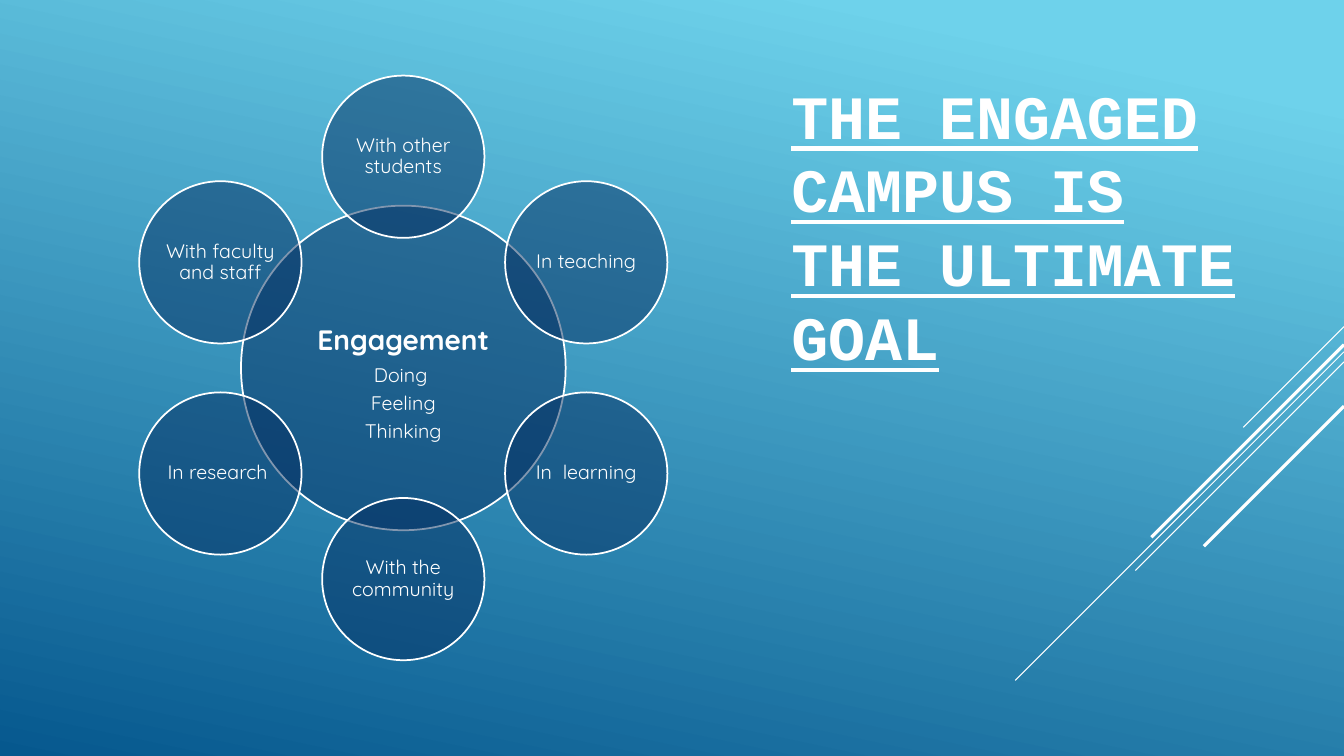
import math
from dataclasses import dataclass

import lxml.etree
import pptx
import pptx.dml.color
import pptx.enum.shapes
import pptx.enum.text
import pptx.oxml.ns
import pptx.util

Inches = pptx.util.Inches
Pt = pptx.util.Pt
qn = pptx.oxml.ns.qn


@dataclass(frozen=True)
class Theme:
    """Colours, fonts and type sizes of the slide."""
    white: str = "FFFFFF"
    navy: str = "052F61"
    sky: str = "6ED2EB"
    deep: str = "06588E"
    title_font: str = "Courier New"
    body_font: str = "Quicksand"
    title: int = 44
    heading: int = 20
    body: int = 14
    outline: float = 1.25
    thin: float = 0.75
    thick: float = 2.25


THEME = Theme()
PETALS = ["With other students", "In teaching", "In  learning",
          "With the community", "In research ", "With faculty and staff"]
FEATURES = ["Doing ", "Feeling", "Thinking"]
STREAKS = [(3.24, 1.0, THEME.thin), (3.49, 3.26, THEME.thin),
           (3.59, 2.07, THEME.thin), (3.42, 1.91, THEME.thick),
           (4.03, 1.39, THEME.thick)]


def rgb(color):
    """Turn a hex string into a colour."""
    return pptx.dml.color.RGBColor.from_string(color)


def write(p, text, *, size=THEME.body, font=THEME.body_font, bold=False,
          underline=False, align=None, spacing=None, after=None):
    """Write formatted text into a paragraph."""
    p.alignment, p.line_spacing = align, spacing
    if after is not None:
        p.space_after = Pt(after)
    r = p.add_run()
    r.text = text
    r.font.name, r.font.size = font, Pt(size)
    r.font.bold, r.font.underline = bold, underline
    r.font.color.rgb = rgb(THEME.white)


def add_background(s):
    """Fill the slide with a slanted blue gradient."""
    fill = s.background.fill
    fill.gradient()
    fill.gradient_angle = 360 - 102
    stops = [(0.1, THEME.sky), (1.0, THEME.deep)]
    for stop, (position, color) in zip(fill.gradient_stops, stops):
        stop.position = position
        stop.color.rgb = rgb(color)


def add_streaks(s, right):
    """Draw the diagonal lines that run down from the right edge."""
    for top, reach, width in STREAKS:
        line = s.shapes.add_connector(
            pptx.enum.shapes.MSO_CONNECTOR.STRAIGHT, Inches(right), Inches(top),
            Inches(right - reach), Inches(top + reach))
        line.line.color.rgb = rgb(THEME.white)
        line.line.width = Pt(width)
        lxml.etree.SubElement(line.element.spPr, qn("a:effectLst"))


def add_title(s, left, top, width, height):
    """Place the underlined title against the bottom of its box."""
    box = s.shapes.add_textbox(*map(Inches, (left, top, width, height)))
    tf = box.text_frame
    tf.word_wrap = True
    tf.vertical_anchor = pptx.enum.text.MSO_ANCHOR.BOTTOM
    write(tf.paragraphs[0], "THE ENGAGED CAMPUS IS THE ULTIMATE GOAL",
          size=THEME.title, font=THEME.title_font, bold=True, underline=True)


def add_circle(s, cx, cy, diameter, lines, inset, drop=0):
    """Draw a translucent circle with centred lines of (text, size, bold)."""
    sp = s.shapes.add_shape(
        pptx.enum.shapes.MSO_SHAPE.OVAL, Inches(cx - diameter / 2),
        Inches(cy - diameter / 2), Inches(diameter), Inches(diameter))
    sp.shadow.inherit = False
    sp.fill.solid()
    sp.fill.fore_color.rgb = rgb(THEME.navy)
    tint = sp.element.spPr.find(qn("a:solidFill"))[0]
    lxml.etree.SubElement(tint, qn("a:alpha"), val="50000")
    sp.line.color.rgb = rgb(THEME.white)
    sp.line.width = Pt(THEME.outline)
    tf = sp.text_frame
    tf.word_wrap = True
    tf.vertical_anchor = pptx.enum.text.MSO_ANCHOR.MIDDLE
    tf.margin_left = tf.margin_right = tf.margin_bottom = Inches(inset)
    tf.margin_top = Inches(inset + drop)
    for i, (text, size, bold) in enumerate(lines):
        p = tf.add_paragraph() if i else tf.paragraphs[0]
        write(p, text, size=size, bold=bold, spacing=0.9, after=0.35 * size,
              align=pptx.enum.text.PP_ALIGN.CENTER)


def add_wheel(s, left, top, width, height):
    """Draw the engagement circle with its ring of petals."""
    cx, cy = left + width / 2, top + height / 2
    petal = 1.61
    radius = (height - petal) / 2
    core = [("Engagement", THEME.heading, True)]
    core += [(feature, THEME.body, False) for feature in FEATURES]
    add_circle(s, cx, cy, 2 * petal, core, 0.01, drop=0.33)
    for i, label in enumerate(PETALS):
        angle = 2 * math.pi * i / len(PETALS)
        add_circle(s, cx + radius * math.sin(angle),
                   cy - radius * math.cos(angle), petal,
                   [(label, THEME.body, False)], 0.02)


def main():
    """Build the slide and save it."""
    prs = pptx.Presentation()
    prs.slide_width, prs.slide_height = Inches(13.33), Inches(7.5)
    s = prs.slides.add_slide(prs.slide_layouts[6])
    add_background(s)
    add_streaks(s, 13.33)
    add_title(s, 7.75, 2.25, 4.63, 1.5)
    add_wheel(s, 1.38, 0.75, 5.24, 5.8)
    prs.save("out.pptx")


if __name__ == "__main__":
    main()
